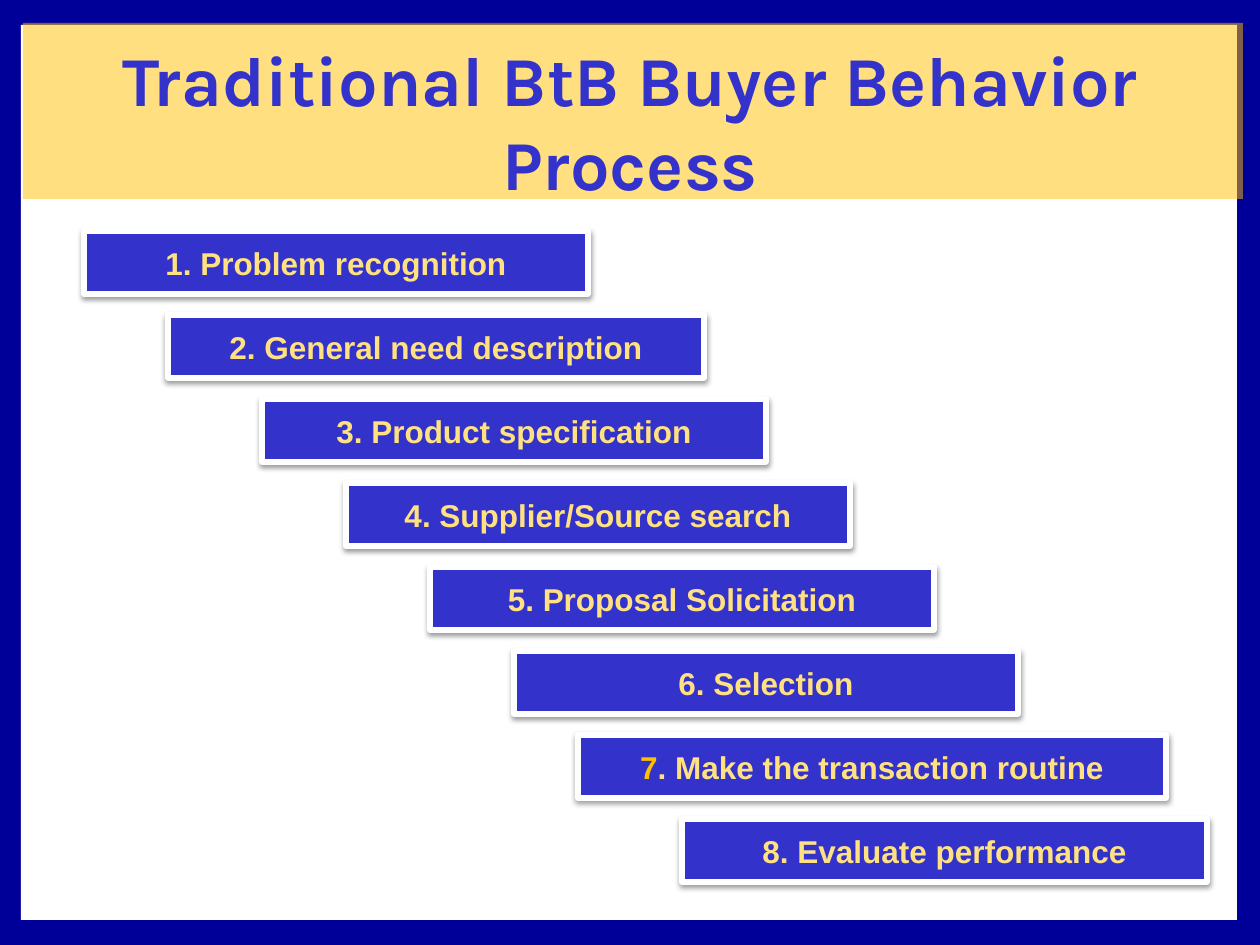
"""Build the slide on the eight steps of the BtB buying process."""
from lxml import etree
from pptx import Presentation
from pptx.dml.color import RGBColor
from pptx.enum.shapes import MSO_SHAPE
from pptx.enum.text import MSO_ANCHOR, PP_ALIGN
from pptx.oxml import parse_xml
from pptx.util import Emu, Pt

RECT = MSO_SHAPE.RECTANGLE
MIDDLE = MSO_ANCHOR.MIDDLE
CENTER = PP_ALIGN.CENTER
NAVY = RGBColor(0x00, 0x00, 0x99)
WHITE = RGBColor(0xFF, 0xFF, 0xFF)
BLUE = RGBColor(0x33, 0x33, 0xCC)
GOLD = RGBColor(0xFF, 0xC0, 0x00)
CREAM = RGBColor(0xFF, 0xE1, 0x81)
NS = "http://schemas.openxmlformats.org/drawingml/2006/main"
SHADOW = (
    f'<a:effectLst xmlns:a="{NS}">'
    '<a:outerShdw blurRad="40000" dist="20000" dir="5400000" rotWithShape="0">'
    '<a:srgbClr val="000000"><a:alpha val="38000"/></a:srgbClr>'
    "</a:outerShdw></a:effectLst>"
)

SCALE = 914400 / 126
WIDTH, HEIGHT = 1260, 945
TOP, PITCH, TALL = 231, 84, 63

TITLE = "Traditional BtB Buyer Behavior Process"
STEPS = [
    ("Problem recognition", 84, 504, CREAM),
    ("General need description", 168, 536, CREAM),
    ("Product specification", 262, 504, CREAM),
    ("Supplier/Source search", 346, 504, CREAM),
    ("Proposal Solicitation", 430, 504, CREAM),
    ("Selection", 514, 504, CREAM),
    ("Make the transaction routine", 578, 588, GOLD),
    ("Evaluate performance", 682, 525, CREAM),
]


def px(num):
    return Emu(round(num * SCALE))


def add_box(slide, place, color):
    box = slide.shapes.add_shape(RECT, *map(px, place))
    box.shadow.inherit = False
    box.fill.solid()
    box.fill.fore_color.rgb = color
    box.line.fill.background()
    return box


def set_font(para, name, size):
    para.alignment = CENTER
    para.font.name = name
    para.font.size = Pt(size)
    para.font.bold = True


def add_band(slide):
    band = add_box(slide, (23, 23, 1220, 176), GOLD)
    tint = band.fill._xPr.find(f".//{{{NS}}}srgbClr")
    etree.SubElement(tint, f"{{{NS}}}alpha", val="50000")


def add_step(slide, num, text, left, width, color):
    place = (left, TOP + (num - 1) * PITCH, width, TALL)
    box = add_box(slide, place, BLUE)
    box.line.color.rgb = WHITE
    box.line.width = Pt(3)
    props = box._element.spPr
    props.remove(props.find(f"{{{NS}}}effectLst"))
    props.append(parse_xml(SHADOW))
    frame = box.text_frame
    frame.word_wrap = False
    frame.vertical_anchor = MIDDLE
    para = frame.paragraphs[0]
    set_font(para, "Arial", 18)
    parts = [(f"{num}. {text}", CREAM)]
    if color != CREAM:
        parts = [(str(num), color), (f". {text}", CREAM)]
    for words, tone in parts:
        run = para.add_run()
        run.text = words
        run.font.color.rgb = tone


def set_title(slide):
    title = slide.shapes.title
    title.left, title.top, title.width, title.height = map(px, (42, 42, 1176, 157))
    frame = title.text_frame
    frame.text = TITLE
    frame.word_wrap = True
    frame.vertical_anchor = MIDDLE
    para = frame.paragraphs[0]
    set_font(para, "Karla", 40)
    para.font.color.rgb = BLUE
    slide.shapes._spTree.append(title._element)


def main():
    deck = Presentation()
    deck.slide_width, deck.slide_height = px(WIDTH), px(HEIGHT)
    slide = deck.slides.add_slide(deck.slide_layouts[5])
    add_box(slide, (0, 0, WIDTH, HEIGHT), NAVY)
    add_box(slide, (21, 25, 1216, 895), WHITE)
    add_band(slide)
    for num, step in enumerate(STEPS, 1):
        add_step(slide, num, *step)
    set_title(slide)
    deck.save("out.pptx")


if __name__ == "__main__":
    main()
